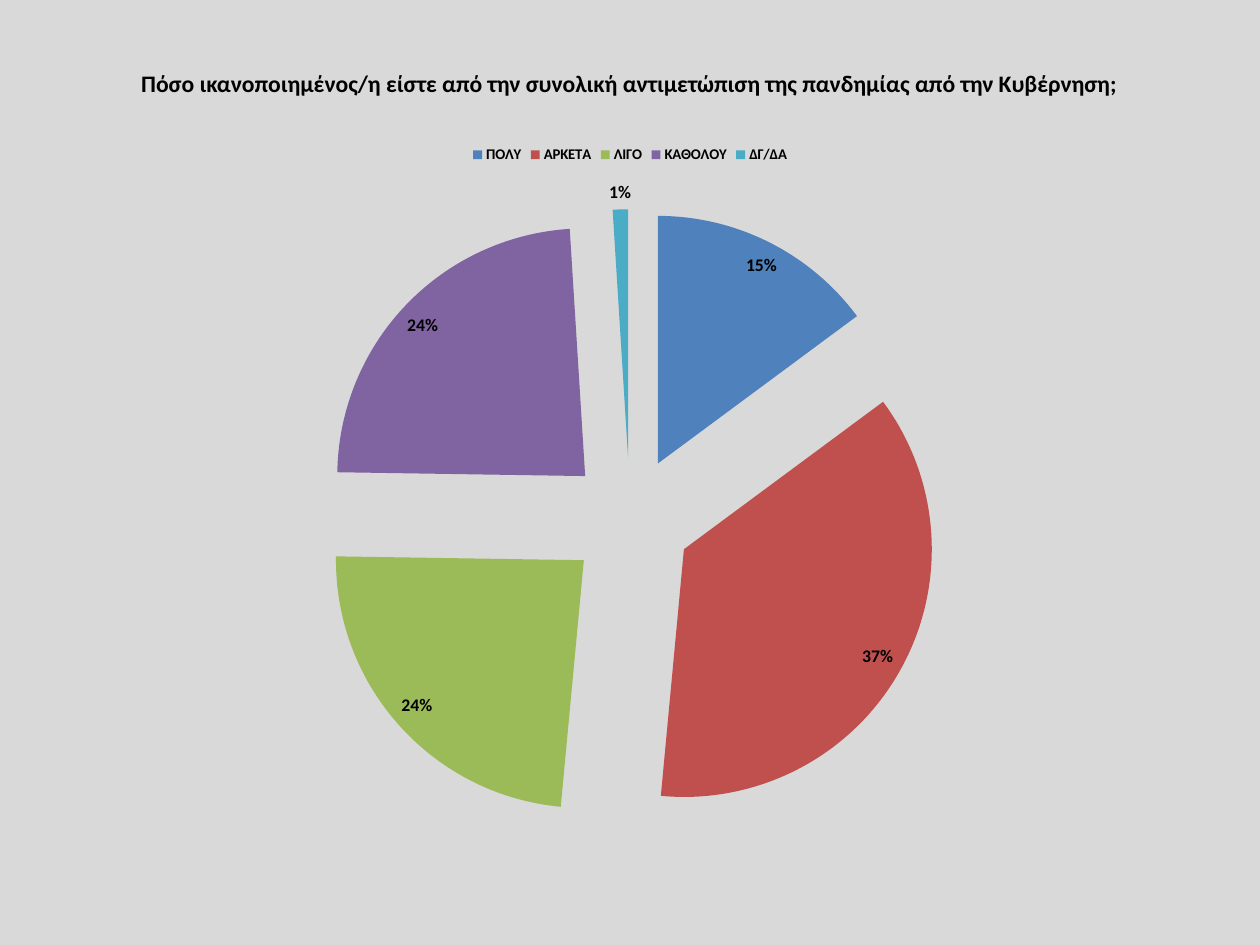
from lxml.etree import SubElement
from pptx import Presentation
from pptx.chart.data import CategoryChartData
from pptx.dml.color import RGBColor
from pptx.enum.chart import XL_CHART_TYPE, XL_LABEL_POSITION, XL_LEGEND_POSITION
from pptx.enum.text import MSO_ANCHOR, PP_ALIGN
from pptx.oxml import parse_xml
from pptx.oxml.ns import nsdecls, qn
from pptx.util import Pt

COLORS = {"background": "D9D9D9", "text": "000000"}
ANSWERS = {
    "ΠΟΛΥ": (15, "4F81BD"),
    "ΑΡΚΕΤΑ": (37, "C0504D"),
    "ΛΙΓΟ": (24, "9BBB59"),
    "ΚΑΘΟΛΟΥ": (24, "8064A2"),
    "ΔΓ/ΔΑ": (1, "4BACC6"),
}
QUESTION = ("Πόσο ικανοποιημένος/η είστε από την συνολική αντιμετώπιση "
            "της πανδημίας από την Κυβέρνηση;")


class SurveySlide:
    """Holds the text style and the current slide."""

    def __init__(self, presentation):
        self.font_name = "Calibri"
        self.slide = presentation.slides.add_slide(presentation.slide_layouts[6])
        self.fill(self.slide.background.fill, COLORS["background"])

    def fill(self, fill, color):
        fill.solid()
        fill.fore_color.rgb = RGBColor.from_string(color)

    def style_font(self, font, size, bold=True, name=None):
        font.name = name or self.font_name
        font.size = Pt(size)
        font.bold = bold
        font.color.rgb = RGBColor.from_string(COLORS["text"])

    def add_title(self, text, left, top, width, height):
        text_box = self.slide.shapes.add_textbox(Pt(left), Pt(top), Pt(width), Pt(height))
        frame = text_box.text_frame
        frame.word_wrap = True
        frame.vertical_anchor = MSO_ANCHOR.MIDDLE
        frame.margin_left = frame.margin_right = Pt(8.5)
        frame.margin_top = frame.margin_bottom = Pt(4.25)
        paragraph = frame.paragraphs[0]
        paragraph.text = text
        paragraph.alignment = PP_ALIGN.CENTER
        self.style_font(paragraph.font, 16)

    def add_pie(self, answers, explosion, left, top, width, height):
        data = CategoryChartData()
        data.categories = list(answers)
        data.add_series("Series 1", [value for value, _ in answers.values()])
        chart = self.slide.shapes.add_chart(
            XL_CHART_TYPE.PIE, Pt(left), Pt(top), Pt(width), Pt(height), data).chart
        chart.has_title = False
        self.style_font(chart.font, 10, bold=False, name="Arial")

        # Legend
        chart.has_legend = True
        chart.legend.position = XL_LEGEND_POSITION.TOP
        chart.legend.include_in_layout = False
        self.style_font(chart.legend.font, 10)

        # Slices, pulled apart
        plot = chart.plots[0]
        plot.vary_by_categories = True
        series = plot.series[0]
        for index, (_, color) in enumerate(answers.values()):
            self.fill(series.points[index].format.fill, color)
        pull = SubElement(series._element, qn("c:explosion"), val=str(explosion))
        series._element.find(qn("c:dPt")).addprevious(pull)

        # Percentage labels
        labels = series.data_labels
        labels.show_percentage = True
        labels.show_value = False
        labels.show_legend_key = False
        labels.number_format = "0%"
        labels.number_format_is_linked = False
        labels.position = XL_LABEL_POSITION.BEST_FIT
        self.style_font(labels.font, 12)

        # Chart border
        border = parse_xml(
            f'<c:spPr {nsdecls("c", "a")}><a:noFill/><a:ln w="{Pt(0.75)}"><a:solidFill>'
            f'<a:srgbClr val="{COLORS["background"]}"/></a:solidFill></a:ln></c:spPr>')
        chart._chartSpace.find(qn("c:txPr")).addprevious(border)


def main():
    presentation = Presentation()
    presentation.slide_width = Pt(852.5)
    presentation.slide_height = Pt(639.4)
    survey = SurveySlide(presentation)
    survey.add_title(QUESTION, 58.3, 33.8, 735.1, 44.6)
    survey.add_pie(ANSWERS, 25, 42.5, 90.7, 767.5, 480.2)
    presentation.save("out.pptx")


if __name__ == "__main__":
    main()
